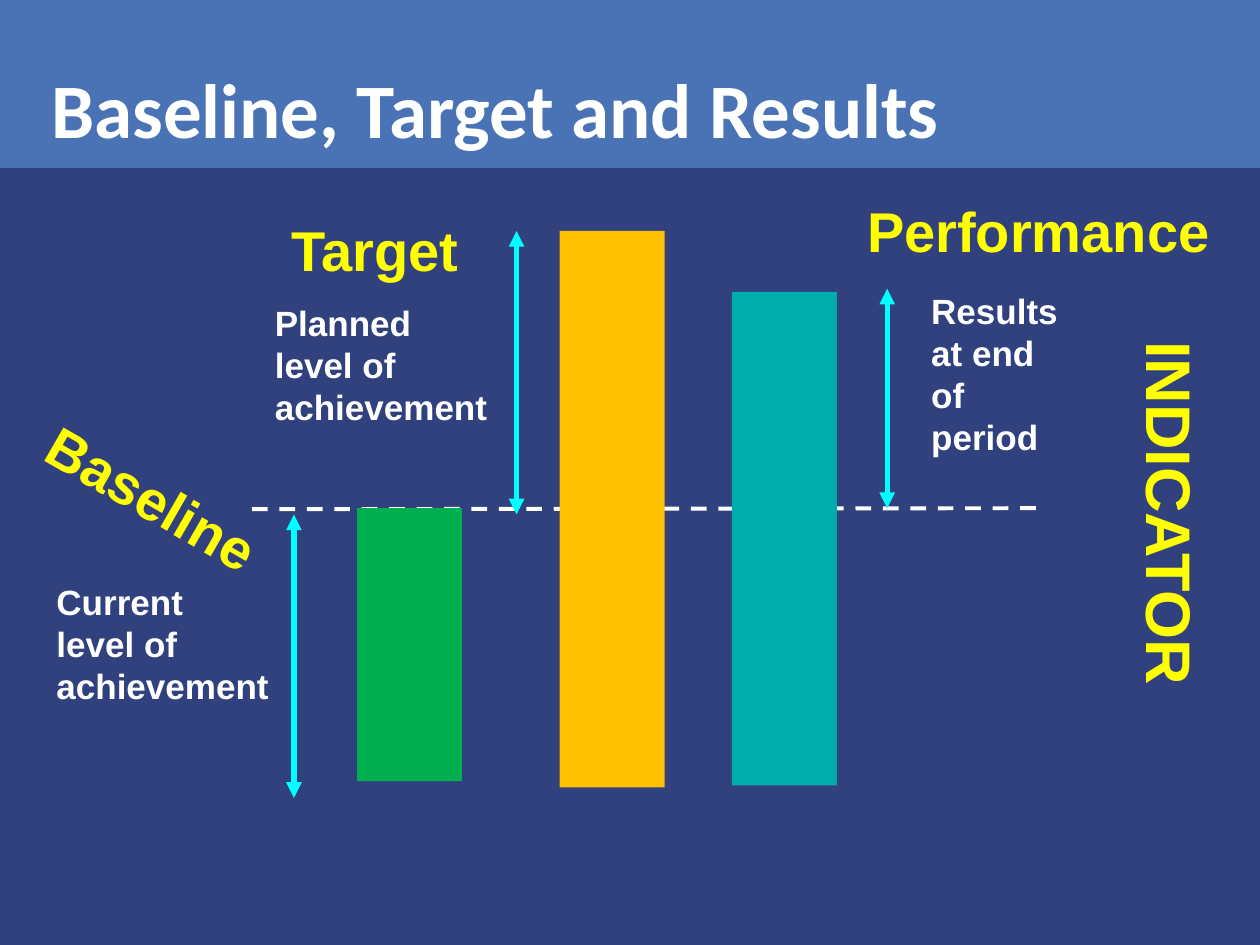
"""Build the slide on baseline, target and results."""
import pptx
import pptx.util
import pptx.dml.color
import pptx.enum.dml
import pptx.enum.shapes
import pptx.enum.text
import pptx.oxml.ns
from lxml import etree

RGB = pptx.dml.color.RGBColor
NAVY = RGB(0x30, 0x41, 0x7E)
BLUE = RGB(0x4A, 0x73, 0xB5)
WHITE = RGB(0xFF, 0xFF, 0xFF)
YELLOW = RGB(0xFF, 0xFF, 0x00)
GREEN = RGB(0x00, 0xB0, 0x50)
TEAL = RGB(0x00, 0xAD, 0xAD)
GOLD = RGB(0xFF, 0xC0, 0x00)
CYAN = RGB(0x00, 0xFF, 0xFF)
WIDE, HIGH = pptx.util.Inches(10), pptx.util.Inches(7.5)
COLS = 12
LEVEL = 4.84


def grid(*cells):
    """Turn square grid cells into slide lengths."""
    return [round(cell * WIDE / COLS) for cell in cells]


def style(para, size, color, face="Arial"):
    """Format a paragraph as bold text."""
    font = para.font
    font.name, font.size, font.bold = face, pptx.util.Pt(size), True
    font.color.rgb = color


def add_bar(slide, left, top, width, height, color):
    """Add a plain filled block."""
    kind = pptx.enum.shapes.MSO_SHAPE.RECTANGLE
    bar = slide.shapes.add_shape(kind, *grid(left, top, width, height))
    bar.shadow.inherit = False
    bar.fill.solid()
    bar.fill.fore_color.rgb = color
    bar.line.fill.background()


def add_line(slide, start, end, color, width):
    """Add a straight line and return it."""
    kind = pptx.enum.shapes.MSO_CONNECTOR.STRAIGHT
    line = slide.shapes.add_connector(kind, *grid(*start, *end))
    line.line.color.rgb = color
    line.line.width = pptx.util.Pt(width)
    etree.SubElement(line._element.spPr, pptx.oxml.ns.qn("a:effectLst"))
    return line


def add_span(slide, start, end):
    """Add an arrow with a head at each end."""
    stroke = add_line(slide, start, end, CYAN, 3).line._get_or_add_ln()
    for tag in ("a:headEnd", "a:tailEnd"):
        etree.SubElement(stroke, pptx.oxml.ns.qn(tag), type="triangle")


def add_text(slide, place, lines, size, color, wrap=False, turn=0):
    """Add a text box with one paragraph a line."""
    box = slide.shapes.add_textbox(*grid(*place))
    box.rotation = turn
    frame = box.text_frame
    frame.word_wrap = wrap
    frame.auto_size = pptx.enum.text.MSO_AUTO_SIZE.SHAPE_TO_FIT_TEXT
    frame.text = "\n".join(lines)
    for para in frame.paragraphs:
        para.line_spacing = pptx.util.Pt(size * 1.2)
        style(para, size, color)


def add_head(slide, place, words, turn=0, size=32):
    """Add a yellow heading."""
    add_text(slide, place, [words], size, YELLOW, turn=turn)


def add_note(slide, place, lines, wrap=False):
    """Add a white note."""
    add_text(slide, place, lines, 20, WHITE, wrap)


def set_title(slide, words):
    """Place and format the title."""
    title = slide.shapes.title
    title.left, title.top, title.width, title.height = grid(0.37, 0.53, 10.9, 0.46)
    frame = title.text_frame
    frame.text = words
    frame.word_wrap = True
    frame.auto_size = pptx.enum.text.MSO_AUTO_SIZE.NONE
    frame.vertical_anchor = pptx.enum.text.MSO_ANCHOR.TOP
    para = frame.paragraphs[0]
    para.alignment = pptx.enum.text.PP_ALIGN.LEFT
    style(para, 44, WHITE, "Calibri")


def main():
    """Build and save the slide."""
    deck = pptx.Presentation()
    deck.slide_width, deck.slide_height = WIDE, HIGH
    slide = deck.slides.add_slide(deck.slide_layouts[5])
    slide.background.fill.solid()
    slide.background.fill.fore_color.rgb = NAVY

    add_bar(slide, 0, 0, COLS, 1.6, BLUE)
    title = slide.shapes.title._element
    title.getparent().append(title)
    set_title(slide, "Baseline, Target and Results")
    rule = add_line(slide, (2.4, LEVEL + 0.01), (9.9, LEVEL), WHITE, 2.25)
    rule.line.dash_style = pptx.enum.dml.MSO_LINE.DASH

    add_head(slide, (0.23, 4.36, 2.45, 0.77), "Baseline", turn=29.9)
    add_bar(slide, 3.4, LEVEL, 1, 2.6, GREEN)
    add_span(slide, (2.8, 4.9), (2.8, 7.6))
    add_note(slide, (0.42, 5.47, 2.28, 1.33), ["Current", "level of", "achievement"])

    add_bar(slide, 6.97, 2.78, 1, 4.7, TEAL)
    add_span(slide, (8.45, 2.75), (8.45, LEVEL))
    add_head(slide, (8.14, 1.81, 3.53, 0.77), "Performance")
    add_note(slide, (8.75, 2.7, 1.57, 1.74), ["Results", "at end of period"], True)

    add_bar(slide, 5.33, 2.2, 1, 5.3, GOLD)
    add_head(slide, (2.66, 1.99, 1.85, 0.77), "Target")
    add_span(slide, (4.92, 2.2), (4.92, 4.9))
    add_note(slide, (2.5, 2.81, 2.28, 1.33), ["Planned", "level of", "achievement"])

    add_head(slide, (9.38, 4.48, 3.55, 0.85), "INDICATOR", turn=90, size=36)
    deck.save("out.pptx")


if __name__ == "__main__":
    main()
